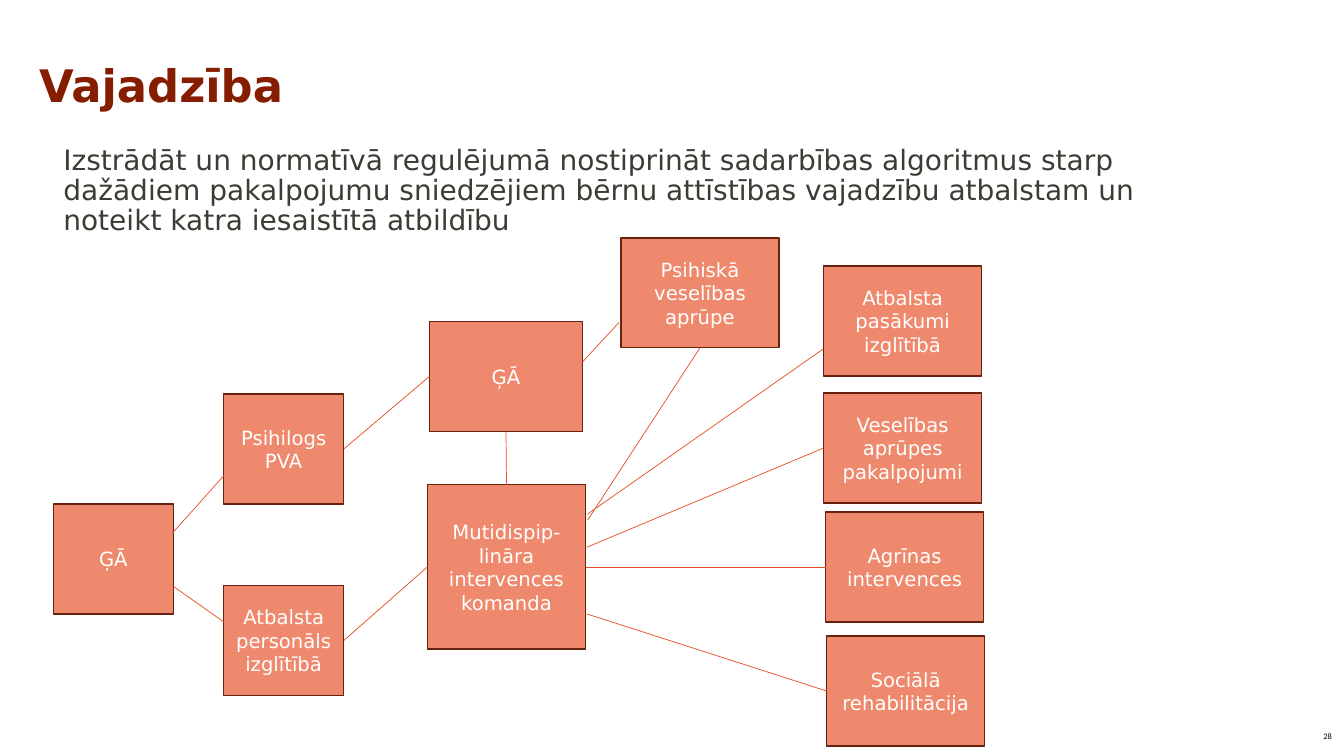
from dataclasses import dataclass

from lxml import etree
from pptx import Presentation
from pptx.dml.color import RGBColor
from pptx.enum.shapes import MSO_CONNECTOR, MSO_SHAPE
from pptx.enum.text import MSO_ANCHOR, PP_ALIGN
from pptx.oxml.ns import qn
from pptx.util import Emu, Inches, Pt

RECTANGLE = MSO_SHAPE.RECTANGLE
STRAIGHT = MSO_CONNECTOR.STRAIGHT
LEFT, CENTER = PP_ALIGN.LEFT, PP_ALIGN.CENTER
ANCHOR_TOP, ANCHOR_MIDDLE = MSO_ANCHOR.TOP, MSO_ANCHOR.MIDDLE
SIDE_TOP, SIDE_LEFT, SIDE_BOTTOM, SIDE_RIGHT = range(4)

SLIDE_WIDTH, SLIDE_HEIGHT = Inches(13.33), Inches(7.5)
COLUMN, ROW = SLIDE_WIDTH / 40, SLIDE_HEIGHT / 22.5
NARROW, MEDIUM, WIDE = 3.57, 4.56, 4.71
LOW, TALL = 3.27, 4.89


@dataclass(frozen=True)
class TextStyle:
    size: float
    color: str
    font: str = "DejaVu Sans"
    bold: bool = False
    align: int = LEFT
    anchor: int = ANCHOR_TOP
    line_spacing: float = 1.0


@dataclass(frozen=True)
class Theme:
    title: TextStyle = TextStyle(32, "851D00", bold=True, line_spacing=0.9)
    body: TextStyle = TextStyle(20, "3C3C34", line_spacing=0.9)
    box: TextStyle = TextStyle(14, "FFFFFF", align=CENTER, anchor=ANCHOR_MIDDLE)
    number: TextStyle = TextStyle(6, "000000", font="Calibri", align=CENTER,
                                  anchor=ANCHOR_MIDDLE)
    accent: str = "E84C22"
    outline: str = "66210F"
    box_opacity: int = 66
    outline_width: float = 1
    link_width: float = 0.5


@dataclass(frozen=True)
class Area:
    """A place on the grid, in columns and rows."""
    column: float
    row: float
    columns: float
    rows: float

    def lengths(self):
        return (Emu(round(self.column * COLUMN)), Emu(round(self.row * ROW)),
                Emu(round(self.columns * COLUMN)), Emu(round(self.rows * ROW)))


@dataclass(frozen=True)
class Label:
    text: str
    area: Area
    style: TextStyle


@dataclass(frozen=True)
class Box:
    name: str
    text: str
    area: Area


@dataclass(frozen=True)
class Point:
    column: float
    row: float


@dataclass(frozen=True)
class Side:
    box: str
    index: int


@dataclass(frozen=True)
class Link:
    start: Point | Side
    end: Point | Side


THEME = Theme()

LABELS = [
    Label("Vajadzība", Area(0.87, 1.74, 34.5, 2.1), THEME.title),
    Label("Izstrādāt un normatīvā regulējumā nostiprināt sadarbības algoritmus starp "
          "dažādiem pakalpojumu sniedzējiem bērnu attīstības vajadzību atbalstam un "
          "noteikt katra iesaistītā atbildību", Area(1.59, 4.2, 34.5, 14.28), THEME.body),
    Label("28", Area(39.03, 21.3, 0.96, 1.2), THEME.number),
]

BOXES = [
    Box("first doctor", "ĢĀ", Area(1.59, 15, NARROW, LOW)),
    Box("psychologist", "Psihilogs PVA", Area(6.66, 11.73, NARROW, LOW)),
    Box("school staff", "Atbalsta personāls izglītībā", Area(6.66, 17.43, NARROW, LOW)),
    Box("second doctor", "ĢĀ", Area(12.78, 9.57, MEDIUM, LOW)),
    Box("team", "Mutidispip-lināra intervences komanda", Area(12.72, 14.43, WIDE, TALL)),
    Box("mental care", "Psihiskā veselības aprūpe", Area(18.48, 7.08, WIDE, LOW)),
    Box("school support", "Atbalsta pasākumi izglītībā", Area(24.51, 7.92, WIDE, LOW)),
    Box("health care", "Veselības aprūpes pakalpojumi", Area(24.51, 11.7, WIDE, LOW)),
    Box("early help", "Agrīnas intervences", Area(24.57, 15.24, WIDE, LOW)),
    Box("social care", "Sociālā rehabilitācija", Area(24.6, 18.93, WIDE, LOW)),
]

LINKS = [
    Link(Point(5.13, 17.43), Point(6.66, 18.51)),
    Link(Point(5.13, 15.87), Point(6.66, 14.16)),
    Link(Side("school staff", SIDE_RIGHT), Side("team", SIDE_LEFT)),
    Link(Side("psychologist", SIDE_RIGHT), Side("second doctor", SIDE_LEFT)),
    Link(Side("second doctor", SIDE_BOTTOM), Side("team", SIDE_TOP)),
    Link(Point(17.34, 10.77), Point(18.42, 9.6)),
    Link(Point(17.46, 18.27), Side("social care", SIDE_LEFT)),
    Link(Side("team", SIDE_RIGHT), Side("early help", SIDE_LEFT)),
    Link(Point(17.46, 16.29), Side("health care", SIDE_LEFT)),
    Link(Point(17.49, 15.3), Point(24.51, 10.38)),
    Link(Side("mental care", SIDE_BOTTOM), Point(17.49, 15.48)),
]


def write_text(shape, text: str, style: TextStyle) -> None:
    frame = shape.text_frame
    frame.word_wrap = True
    frame.vertical_anchor = style.anchor
    paragraph = frame.paragraphs[0]
    paragraph.alignment = style.align
    paragraph.line_spacing = style.line_spacing
    run = paragraph.add_run()
    run.text = text
    run.font.name = style.font
    run.font.size = Pt(style.size)
    run.font.bold = style.bold
    run.font.color.rgb = RGBColor.from_string(style.color)


def draw_label(slide, label: Label) -> None:
    write_text(slide.shapes.add_textbox(*label.area.lengths()), label.text, label.style)


def draw_box(slide, box: Box):
    shape = slide.shapes.add_shape(RECTANGLE, *box.area.lengths())
    shape.shadow.inherit = False
    shape.fill.solid()
    shape.fill.fore_color.rgb = RGBColor.from_string(THEME.accent)
    color = shape.fill._xPr.find(qn("a:solidFill"))[0]
    etree.SubElement(color, qn("a:alpha"), val=str(THEME.box_opacity * 1000))
    shape.line.color.rgb = RGBColor.from_string(THEME.outline)
    shape.line.width = Pt(THEME.outline_width)
    write_text(shape, box.text, THEME.box)
    return shape


def position(end: Point | Side) -> tuple[Emu, Emu]:
    """Where a free end lies; a joined end is placed when it is connected."""
    if isinstance(end, Side):
        return Emu(0), Emu(0)
    return Emu(round(end.column * COLUMN)), Emu(round(end.row * ROW))


def draw_link(slide, link: Link, shapes: dict) -> None:
    connector = slide.shapes.add_connector(STRAIGHT, *position(link.start), *position(link.end))
    for end, connect in ((link.start, connector.begin_connect),
                         (link.end, connector.end_connect)):
        if isinstance(end, Side):
            connect(shapes[end.box], end.index)
    connector.line.color.rgb = RGBColor.from_string(THEME.accent)
    connector.line.width = Pt(THEME.link_width)
    etree.SubElement(connector._element.spPr, qn("a:effectLst"))


def main() -> None:
    presentation = Presentation()
    presentation.slide_width, presentation.slide_height = SLIDE_WIDTH, SLIDE_HEIGHT
    slide = presentation.slides.add_slide(presentation.slide_layouts[6])
    for label in LABELS:
        draw_label(slide, label)
    shapes = {box.name: draw_box(slide, box) for box in BOXES}
    for link in LINKS:
        draw_link(slide, link, shapes)
    presentation.save("out.pptx")


if __name__ == "__main__":
    main()
